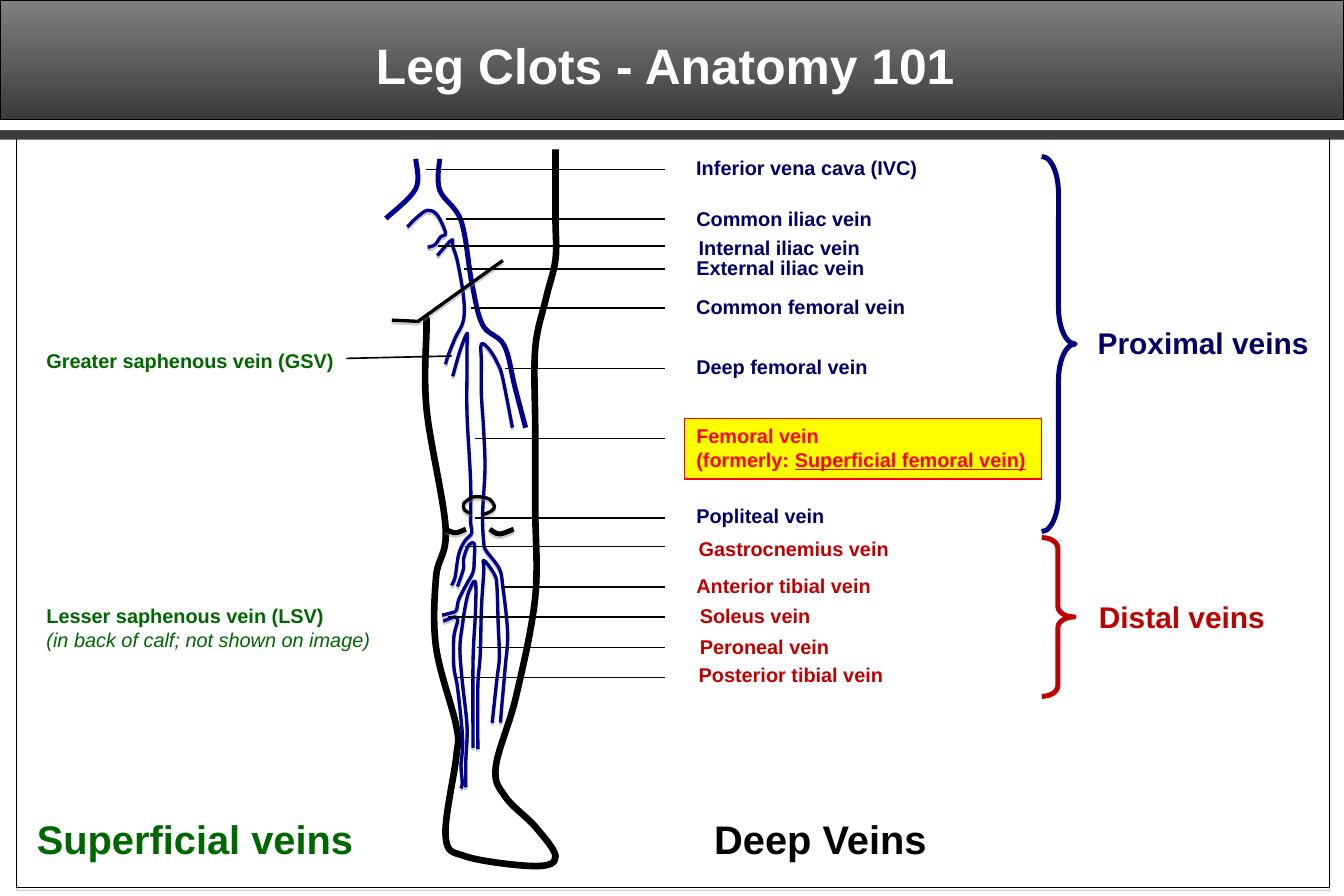
"""Build a slide that labels the deep and superficial veins of the leg."""
from typing import NamedTuple

from pptx import Presentation
from pptx.dml.color import RGBColor
from pptx.enum.shapes import MSO_CONNECTOR, MSO_SHAPE as Preset
from pptx.enum.text import MSO_ANCHOR, MSO_AUTO_SIZE, PP_ALIGN
from pptx.oxml import parse_xml
from pptx.oxml.ns import nsdecls, qn
from pptx.oxml.xmlchemy import OxmlElement
from pptx.util import Inches, Pt

BLACK, WHITE = RGBColor(0, 0, 0), RGBColor(255, 255, 255)
NAVY, VEIN_BLUE, BRACE_BLUE = RGBColor(0, 0, 0x66), RGBColor(0, 0, 0x90), RGBColor(0, 0, 0x80)
GREEN, CRIMSON = RGBColor(0, 0x66, 0), RGBColor(0xBD, 0, 0)
RED, YELLOW = RGBColor(255, 0, 0), RGBColor(255, 255, 0)
GRAY, CHARCOAL = RGBColor(0x80, 0x80, 0x80), RGBColor(0x3A, 0x3C, 0x3A)
COLUMNS, ROWS = 112.5, 75
LEADER_END = 55.7

Points = list[tuple[float, float]]


class Label(NamedTuple):
    text: str
    left: float
    top: float
    width: float
    color: RGBColor
    size: int = 12
    height: float = 3
    underlined: str = ""
    italic_line: int = -1


class DeepVein(NamedTuple):
    label: Label
    leader_x: float
    leader_y: float


class Stroke(NamedTuple):
    points: Points
    color: RGBColor = VEIN_BLUE
    width: float = 2
    shadow: bool = True
    smooth: bool = True


class Brace(NamedTuple):
    top: float
    width: float
    height: float
    curl: float
    color: RGBColor


DEEP_VEINS = [
    DeepVein(Label("Inferior vena cava (IVC)", 57.3, 12.5, 20.7, NAVY), 35.7, 14.2),
    DeepVein(Label("Common iliac vein", 57.3, 16.8, 16.9, NAVY), 37.3, 18.35),
    DeepVein(Label("Internal iliac vein", 57.5, 19.2, 15.7, NAVY), 36.7, 20.6),
    DeepVein(Label("External iliac vein", 57.3, 20.9, 16.2, NAVY), 38.8, 22.5),
    DeepVein(Label("Common femoral vein", 57.3, 24.2, 19.7, NAVY), 39.4, 25.8),
    DeepVein(Label("Deep femoral vein", 57.3, 29.2, 16.5, NAVY), 42.3, 30.85),
    DeepVein(Label("Femoral vein\n(formerly: ", 57.3, 35, 29.9, RED, height=5.1,
                   underlined="Superficial femoral vein)"), 39.8, 36.7),
    DeepVein(Label("Popliteal vein", 57.3, 41.7, 12.9, NAVY), 39.8, 43.35),
    DeepVein(Label("Gastrocnemius vein", 57.5, 44.4, 18.1, CRIMSON), 38.9, 45.75),
    DeepVein(Label("Anterior tibial vein", 57.3, 47.5, 16.9, CRIMSON), 41.9, 49.15),
    DeepVein(Label("Soleus vein", 57.6, 50, 11.4, CRIMSON), 37.5, 51.65),
    DeepVein(Label("Peroneal vein", 57.6, 52.6, 13, CRIMSON), 39.9, 54.2),
    DeepVein(Label("Posterior tibial vein", 57.5, 55, 17.6, CRIMSON), 38.2, 56.7),
]
OTHER_LABELS = [
    Label("Greater saphenous vein (GSV)", 2.9, 28.7, 26.3, GREEN),
    Label("Lesser saphenous vein (LSV)\n(in back of calf; not shown on image)",
          2.9, 50, 29.8, GREEN, height=5.1, italic_line=1),
    Label("Superficial veins", 2.1, 67.7, 28.8, GREEN, 24, 5.1),
    Label("Deep Veins", 58.8, 67.7, 20, BLACK, 24, 5.1),
    Label("Proximal veins", 90.9, 26.7, 19.8, NAVY, 18, 4),
    Label("Distal veins", 91, 49.6, 16.1, CRIMSON, 18, 4),
]
BRACES = [Brace(13.1, 2.8, 31.4, 1.1, BRACE_BLUE), Brace(45, 2.7, 13.3, 0.33, CRIMSON)]

LEG = Stroke([
    (46.5, 12.5), (46.5, 18.3), (46.5, 21.7), (45.7, 25), (44.8, 29.2), (44.8, 35.8),
    (44.8, 42.5), (44.8, 50), (43.2, 58.3), (41.5, 64.2), (42.3, 66.7), (44.8, 69.2),
    (46.5, 71.7), (44.8, 72.5), (39, 71.7), (37.3, 70), (38.2, 63.3), (38.2, 60.8),
    (36.5, 54.2), (36.5, 48.3), (37.3, 44.2), (35.7, 34.2), (35.7, 27.5), (35.7, 26.7),
], BLACK, 4, False)
VENA_CAVA = [
    Stroke([(34.8, 13.3), (34.8, 15.8), (32.3, 18.3)], width=3, shadow=False),
    Stroke([(36.8, 13.3), (36.8, 15.9), (38.6, 18.5), (39.5, 23.7), (40.4, 27.2),
            (42.2, 28.9), (43.1, 32.4), (44, 35.8)], width=3, shadow=False),
]
VEIN_WALLS = [Stroke(points) for points in (
    [(34.1, 19), (34.9, 18.2), (35.8, 17.6), (36.6, 18), (37.3, 19.5), (36.9, 19.8),
     (36.4, 20.5), (35.8, 20.7)],
    [(36.6, 21.4), (37.8, 20.1), (37.9, 20.6), (38.3, 21.9), (38.8, 24.8), (38.8, 26.8),
     (38.1, 28.3), (37.5, 29.8), (37.3, 30.5)],
    [(37.9, 31.5), (38.5, 29.4), (39.1, 27.9), (39.1, 28.9), (39.1, 30.9), (39.1, 34.7),
     (39.4, 40.3), (39.4, 43.6), (39.5, 44.6), (38.9, 45.3), (38.4, 46.4), (38.1, 48.3),
     (37.8, 49)],
    [(42.9, 35.8), (42.1, 31.7), (41.7, 30.5), (41, 29.3), (40.3, 28.8), (40.3, 30.4),
     (40.3, 33), (40.5, 36.1), (40.6, 39.3), (40.4, 43.1), (40.5, 45.4), (40.7, 46.1),
     (41.8, 47.6), (42.1, 49.1), (42.5, 53), (42.3, 55.8), (42, 59.2), (41.9, 60.5)],
    [(41.2, 60.5), (41.6, 56.8), (41.8, 55), (41.7, 52.1), (41.6, 49.1), (41.4, 48.1),
     (40.5, 46.9), (40.5, 47.8), (40.3, 50.9), (40.2, 54.8), (40, 57.4), (40, 62.7)],
    [(38.3, 49.1), (38.8, 47.6), (38.8, 46.8), (39.2, 45.7), (39.7, 45.5), (39.7, 46.8),
     (39.6, 47.9), (39, 49), (38.4, 50.2), (38.2, 51.1), (37.8, 51.3), (37, 51.5)],
    [(37.1, 52), (38.3, 51.7), (38, 53.3), (38, 55.8), (38.3, 57.5), (38.7, 61.3),
     (38.7, 62.9), (38.6, 64.1), (38.7, 65.5), (38.6, 66)],
    [(39.6, 62.6), (39.6, 55.4), (39.8, 51.3), (39.8, 48.7), (39.3, 49.4), (39, 50.5),
     (38.7, 52.4), (38.5, 54.3), (38.7, 57), (39.1, 60.8), (39, 63.6), (39, 65.9)],
)]
GROIN = Stroke([(32.8, 26.8), (35, 26.9), (42.1, 21.8)], BLACK, smooth=False)
KNEE = [
    Stroke([(40.4, 43.1), (41.1, 42.8), (41.4, 42.4), (41, 41.8), (40.3, 41.6), (39.6, 41.6),
            (39.1, 41.9), (38.8, 42.2), (38.9, 42.7), (39.4, 43)], BLACK),
    Stroke([(37.3, 44.3), (38.1, 44.6), (39, 44.3)], BLACK, 3),
    Stroke([(41, 44.3), (41.8, 44.7), (43, 44.3)], BLACK, 3),
]

deck = Presentation()
deck.slide_width, deck.slide_height = Inches(11.25), Inches(7.5)
slide = deck.slides.add_slide(deck.slide_layouts[5])
shapes = slide.shapes


def x(columns: float) -> int:
    """Turn grid columns into a length."""
    return round(deck.slide_width * columns / COLUMNS)


def y(rows: float) -> int:
    """Turn grid rows into a length."""
    return round(deck.slide_height * rows / ROWS)


def style(shape, fill: RGBColor | None, line: RGBColor | None, width: float = 0.75,
          shadow: bool = False) -> None:
    """Set the fill, outline and drop shadow of a shape."""
    if fill is None:
        shape.fill.background()
    else:
        shape.fill.solid()
        shape.fill.fore_color.rgb = fill
    if line is None:
        shape.line.fill.background()
    else:
        shape.line.color.rgb, shape.line.width = line, Pt(width)
    shape.shadow.inherit = False
    if shadow:
        shape.element.spPr.find(qn("a:effectLst")).append(parse_xml(
            f'<a:outerShdw {nsdecls("a")} dist="20320" dir="5400000" rotWithShape="0">'
            '<a:srgbClr val="808080"><a:alpha val="38000"/></a:srgbClr></a:outerShdw>'))


def add_preset(preset: Preset, left: float, top: float, width: float, height: float):
    """Add a preset shape placed on the grid."""
    return shapes.add_shape(preset, x(left), y(top), x(width), y(height))


def smooth_path(outline) -> None:
    """Turn the straight segments of an outline into Catmull-Rom curves."""
    knots = [(int(pt.get("x")), int(pt.get("y"))) for pt in outline.element.iter(qn("a:pt"))]
    padded = [knots[0], *knots, knots[-1]]
    segments = list(outline.element.iter(qn("a:lnTo")))
    for segment, a, b, c, d in zip(segments, padded, padded[1:], padded[2:], padded[3:]):
        leave = [q + (r - p) / 6 for p, q, r in zip(a, b, c)]
        arrive = [q - (r - p) / 6 for p, q, r in zip(b, c, d)]
        handles = "".join(f'<a:pt x="{round(h)}" y="{round(v)}"/>' for h, v in (leave, arrive, c))
        segment.getparent().replace(segment, parse_xml(
            f'<a:cubicBezTo {nsdecls("a")}>{handles}</a:cubicBezTo>'))


def draw_stroke(stroke: Stroke) -> None:
    """Draw one open line of the leg."""
    start, *rest = [(x(column), y(row)) for column, row in stroke.points]
    builder = shapes.build_freeform(*start)
    builder.add_line_segments(rest, close=False)
    outline = builder.convert_to_shape()
    if stroke.smooth:
        smooth_path(outline)
    style(outline, None, stroke.color, stroke.width, stroke.shadow)


def draw_leader(start: tuple[float, float], end: tuple[float, float]) -> None:
    """Draw a thin line from a vein to its label."""
    leader = shapes.add_connector(MSO_CONNECTOR.STRAIGHT, x(start[0]), y(start[1]),
                                  x(end[0]), y(end[1]))
    leader.line.color.rgb, leader.line.width = BLACK, Pt(1)
    leader.element.spPr.append(OxmlElement("a:effectLst"))


def format_font(font, size: int, color: RGBColor) -> None:
    """Apply the bold slide font."""
    font.name, font.size, font.bold, font.color.rgb = "Arial", Pt(size), True, color


def draw_label(label: Label) -> None:
    """Write a label, on a yellow box if part of it is underlined."""
    box = add_preset(Preset.RECTANGLE, *label[1:4], label.height) if label.underlined else (
        shapes.add_textbox(x(label.left), y(label.top), x(label.width), y(label.height)))
    frame = box.text_frame
    frame.text = label.text
    frame.word_wrap, frame.auto_size = False, MSO_AUTO_SIZE.SHAPE_TO_FIT_TEXT
    frame.vertical_anchor = MSO_ANCHOR.TOP
    if label.underlined:
        style(box, YELLOW, RED)
        ending = frame.paragraphs[-1].add_run()
        ending.text, ending.font.underline = label.underlined, True
    for index, paragraph in enumerate(frame.paragraphs):
        paragraph.alignment = PP_ALIGN.LEFT
        for run in paragraph.runs:
            format_font(run.font, label.size, label.color)
            if index == label.italic_line:
                run.font.bold, run.font.italic = False, True


def draw_brace(brace: Brace) -> None:
    """Draw a right brace around a group of veins."""
    shape = add_preset(Preset.RIGHT_BRACE, 87.2, brace.top, brace.width, brace.height)
    shape.adjustments[0] = brace.curl
    style(shape, None, brace.color, 3)


def draw_header() -> None:
    """Draw the frame, the header bands and the title."""
    style(add_preset(Preset.RECTANGLE, 1.4, 1.8, 109.9, 72.5), None, BLACK, shadow=True)
    for height, fill in ((11.7, CHARCOAL), (10.9, WHITE)):
        style(add_preset(Preset.RECTANGLE, 0, 0, COLUMNS, height), fill, None)
    banner = add_preset(Preset.RECTANGLE, 0, 0, COLUMNS, 10)
    style(banner, GRAY, BLACK)
    banner.fill.gradient()
    banner.fill.gradient_angle = 270
    for stop, color, position in zip(banner.fill.gradient_stops, (GRAY, CHARCOAL), (0, 1)):
        stop.color.rgb, stop.position = color, position
    title = shapes.title
    title.left, title.top, title.width, title.height = x(7.9), y(0.8), x(95.6), y(9.2)
    title.text_frame.text = "Leg Clots - Anatomy 101"
    title.text_frame.vertical_anchor = MSO_ANCHOR.MIDDLE
    heading = title.text_frame.paragraphs[0]
    heading.alignment = PP_ALIGN.CENTER
    format_font(heading.runs[0].font, 30, WHITE)
    banner.element.addnext(title.element)


def main() -> None:
    """Draw the slide and save it."""
    for stroke in [LEG, *VENA_CAVA, *VEIN_WALLS, GROIN, *KNEE]:
        draw_stroke(stroke._replace(smooth=stroke is not GROIN))
    for vein in DEEP_VEINS:
        draw_label(vein.label)
        draw_leader((vein.leader_x, vein.leader_y), (LEADER_END, vein.leader_y))
    draw_leader((37.8, 29.8), (29, 30))
    for label in OTHER_LABELS:
        draw_label(label)
    for brace in BRACES:
        draw_brace(brace)
    draw_header()
    deck.save("out.pptx")


if __name__ == "__main__":
    main()
